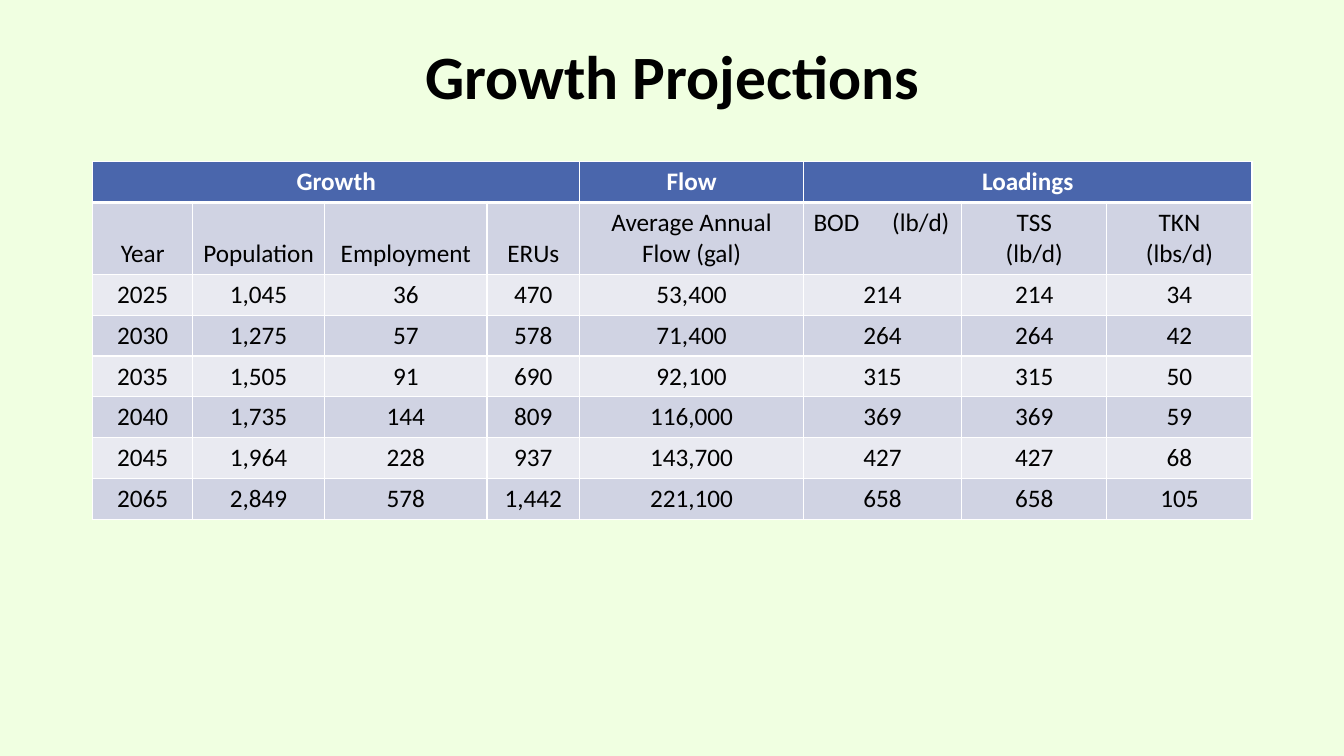
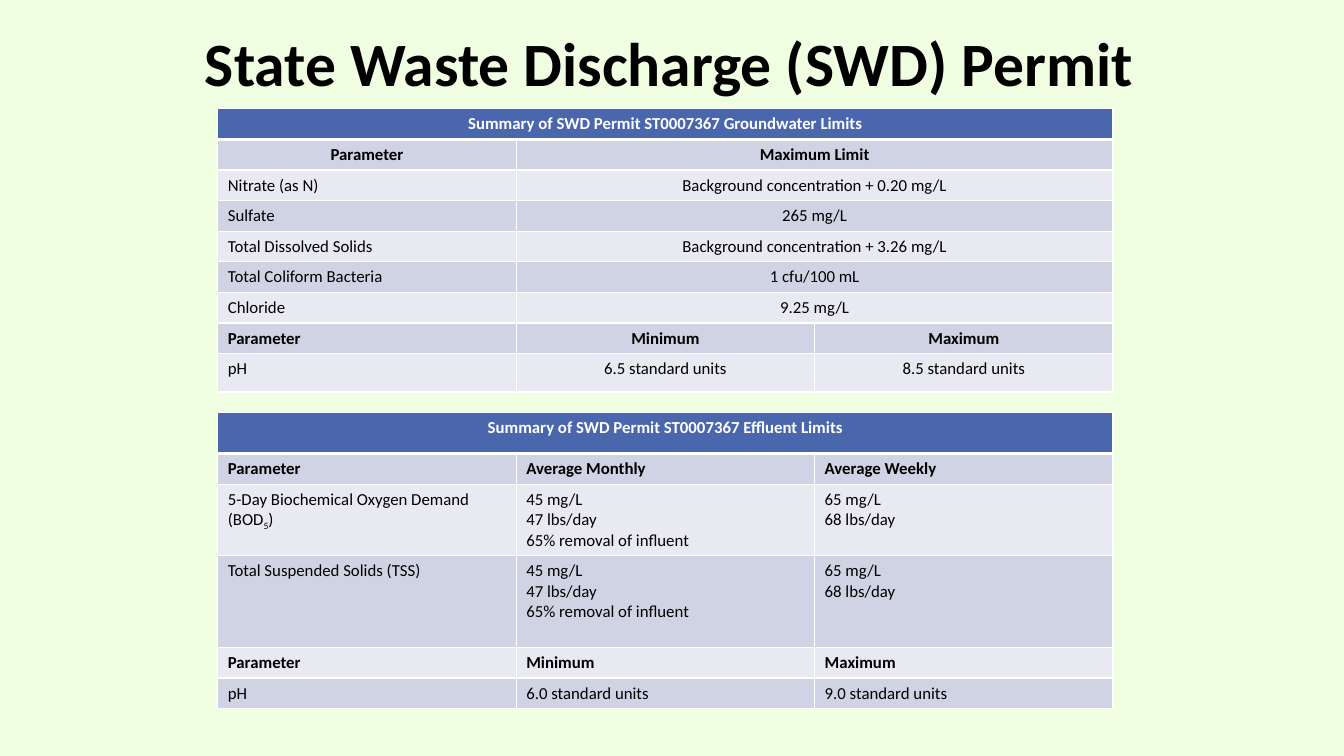
from dataclasses import dataclass
from itertools import groupby

from lxml.etree import SubElement
from pptx import Presentation
from pptx.dml.color import RGBColor
from pptx.enum.text import MSO_ANCHOR as Anchor, PP_ALIGN as Align
from pptx.oxml.ns import qn
from pptx.slide import Slide
from pptx.table import Table, _Cell as Cell
from pptx.text.text import _Paragraph as Para
from pptx.util import Inches, Pt

FONT = "Calibri"
MINT = RGBColor(0xF0, 0xFF, 0xE1)
BLUE = RGBColor(0x4A, 0x66, 0xAC)
DARK = RGBColor(0xD0, 0xD3, 0xE3)
LIGHT = RGBColor(0xE9, 0xEA, 0xF1)
WHITE = RGBColor(0xFF, 0xFF, 0xFF)
BLACK = RGBColor(0x00, 0x00, 0x00)

Rows = list[list[str | None]]


@dataclass(frozen=True)
class Grid:
    left: float
    top: float
    cols: list[float]
    heights: list[float]
    rows: Rows
    size: int
    bold: tuple[int, ...] = (0,)
    middle: tuple[int, ...] = (0,)
    left_cols: tuple[int, ...] = ()


GROWTH = Grid(
    0.92, 1.6,
    [0.99, 1.31, 1.61, 0.92, 2.22, 1.57, 1.44, 1.44],
    [0.41, 0.7] + [0.4] * 6,
    [
        ["Growth", None, None, None, "Flow", "Loadings", None, None],
        ["Year", "Population", "Employment", "ERUs", "Average Annual Flow (gal)",
         "BOD\t(lb/d)", "TSS\n(lb/d)", "TKN\n(lbs/d)"],
        ["2025", "1,045", "36", "470", "53,400", "214", "214", "34"],
        ["2030", "1,275", "57", "578", "71,400", "264", "264", "42"],
        ["2035", "1,505", "91", "690", "92,100", "315", "315", "50"],
        ["2040", "1,735", "144", "809", "116,000", "369", "369", "59"],
        ["2045", "1,964", "228", "937", "143,700", "427", "427", "68"],
        ["2065", "2,849", "578", "1,442", "221,100", "658", "658", "105"],
    ],
    18,
)

GROUND = Grid(
    2.16, 1.08, [2.96] * 3, [0.3] * 8 + [0.38],
    [
        ["Summary of SWD Permit ST0007367 Groundwater Limits", None, None],
        ["Parameter", "Maximum Limit", None],
        ["Nitrate (as N)", "Background concentration + 0.20 mg/L", None],
        ["Sulfate", "265 mg/L", None],
        ["Total Dissolved Solids", "Background concentration + 3.26 mg/L", None],
        ["Total Coliform Bacteria", "1 cfu/100 mL", None],
        ["Chloride", "9.25 mg/L", None],
        ["Parameter", "Minimum", "Maximum"],
        ["pH", "6.5 standard units", "8.5 standard units"],
    ],
    12, bold=(0, 1, 7), middle=(0, 1), left_cols=(0,),
)

MONTH = "45 mg/L\n47 lbs/day\n65% removal of influent"
WEEK = "65 mg/L\n68 lbs/day"
OUTFLOW = Grid(
    2.16, 4.09, [2.96] * 3, [0.41, 0.3, 0.71, 0.91, 0.3, 0.3],
    [
        ["Summary of SWD Permit ST0007367 Effluent Limits", None, None],
        ["Parameter", "Average Monthly", "Average Weekly"],
        ["5-Day Biochemical Oxygen Demand (BOD_5_)", MONTH, WEEK],
        ["Total Suspended Solids (TSS)", MONTH, WEEK],
        ["Parameter", "Minimum", "Maximum"],
        ["pH", "6.0 standard units", "9.0 standard units"],
    ],
    12, bold=(0, 1, 4), left_cols=(0, 1, 2),
)


def style(para: Para, size: int, color: RGBColor, bold: bool) -> None:
    font = para.font
    font.name, font.size, font.bold = FONT, Pt(size), bold
    font.color.rgb = color


def frame(cell: Cell, base: float) -> None:
    props = cell._tc.get_or_add_tcPr()
    for side in "LRTB":
        width = base if side == "B" else 1
        line = SubElement(props, qn(f"a:ln{side}"), w=str(Pt(width)))
        fill = SubElement(line, qn("a:solidFill"))
        SubElement(fill, qn("a:srgbClr"), val=str(WHITE))


def add_tab(para: Para, pos: float) -> None:
    tabs = SubElement(para._p.get_or_add_pPr(), qn("a:tabLst"))
    SubElement(tabs, qn("a:tab"), pos=str(Inches(pos)), algn="l")


def write(cell: Cell, text: str, grid: Grid, row: int, col: int) -> None:
    body = cell.text_frame
    centred = row in grid.middle or col not in grid.left_cols
    for i, line in enumerate(text.split("\n")):
        para = body.add_paragraph() if i else body.paragraphs[0]
        para.alignment = Align.CENTER if centred else Align.LEFT
        if "\t" in line:
            para.alignment = Align.LEFT
            add_tab(para, 0.78)
        style(para, grid.size, BLACK if row else WHITE, row in grid.bold)
        for j, part in enumerate(line.split("_")):
            run = para.add_run()
            run.text = part
            if j % 2:
                run.font._element.set("baseline", "-25000")


def add_grid(slide: Slide, grid: Grid) -> Table:
    table = slide.shapes.add_table(
        len(grid.rows), len(grid.cols), Inches(grid.left), Inches(grid.top),
        Inches(sum(grid.cols)), Inches(sum(grid.heights))).table
    table.first_row = table.horz_banding = False
    for col, width in zip(table.columns, grid.cols):
        col.width = Inches(width)
    for r, texts in enumerate(grid.rows):
        table.rows[r].height = Inches(grid.heights[r])
        starts = [c for c, text in enumerate(texts) if text is not None]
        for c, end in zip(starts, starts[1:] + [len(texts)]):
            if end - c > 1:
                table.cell(r, c).merge(table.cell(r, end - 1))
            write(table.cell(r, c), texts[c], grid, r, c)
        for cell in table.rows[r].cells:
            frame(cell, 1 if r else 3)
            cell.fill.solid()
            cell.fill.fore_color.rgb = (DARK if r % 2 else LIGHT) if r else BLUE
    return table


def add_page(deck: Presentation, text: str, left: float, top: float) -> Slide:
    slide = deck.slides.add_slide(deck.slide_layouts[5])
    title = slide.shapes.title
    title.left, title.top = Inches(left), Inches(top)
    title.width, title.height = Inches(11.5), Inches(1.45)
    title.text_frame.text = text
    title.text_frame.vertical_anchor = Anchor.MIDDLE
    para = title.text_frame.paragraphs[0]
    para.alignment, para.line_spacing = Align.CENTER, 0.9
    style(para, 44, BLACK, True)
    return slide


def main() -> None:
    deck = Presentation()
    deck.slide_width, deck.slide_height = Inches(13.33), Inches(7.5)
    back = deck.slide_master.background.fill
    back.solid()
    back.fore_color.rgb = MINT

    page = add_page(deck, "Growth Projections", 0.92, 0.06)
    table = add_grid(page, GROWTH)
    for col in range(4):
        table.cell(1, col).vertical_anchor = Anchor.BOTTOM

    page = add_page(deck, "State Waste Discharge (SWD) Permit", 0.89, -0.06)
    for grid in (GROUND, OUTFLOW):
        add_grid(page, grid)
    deck.save("out.pptx")


if __name__ == "__main__":
    main()
